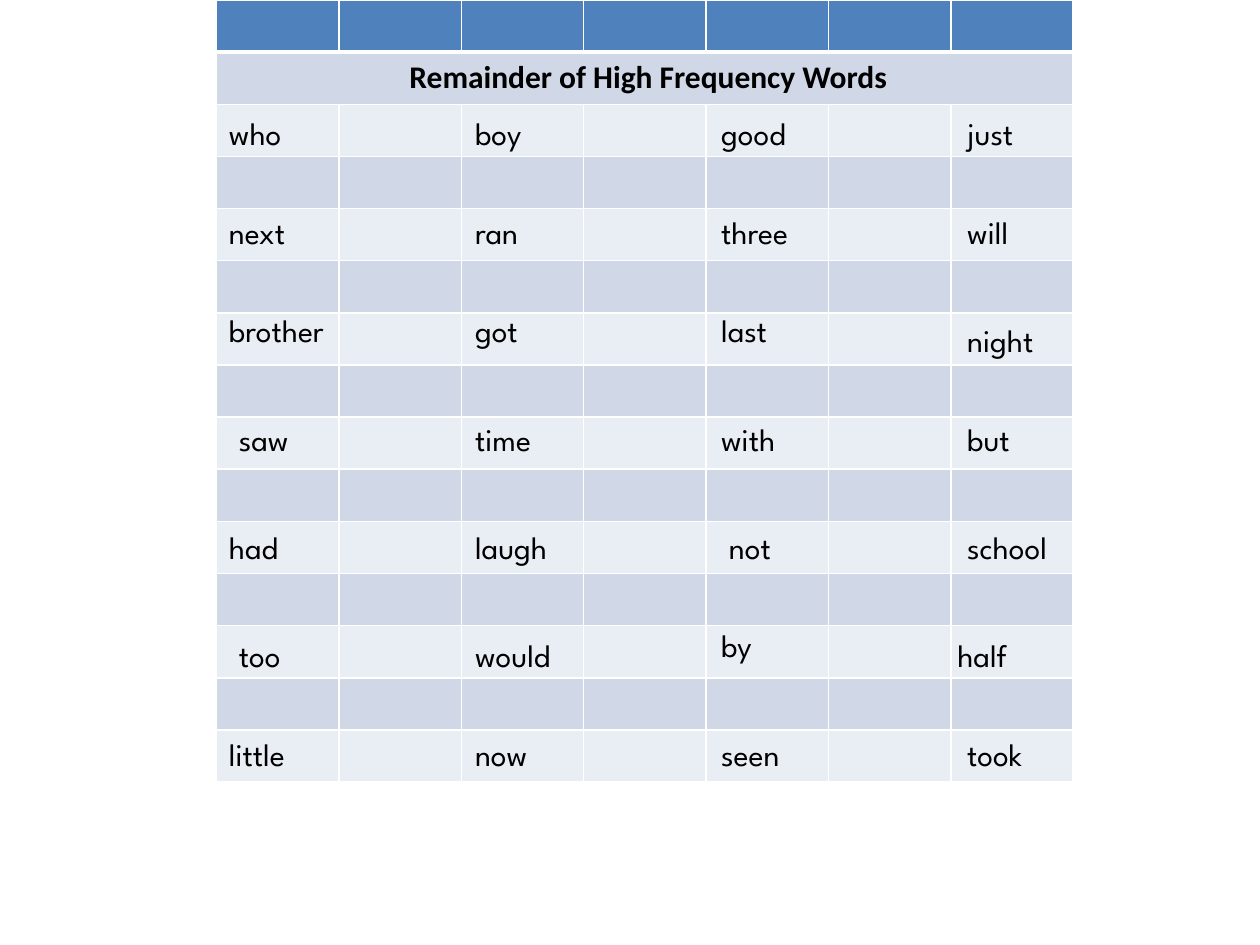
from lxml import etree
from pptx import Presentation
from pptx.dml.color import RGBColor
from pptx.enum.text import MSO_AUTO_SIZE, PP_ALIGN
from pptx.oxml.ns import qn
from pptx.util import Inches, Pt

CENTER = PP_ALIGN.CENTER
GROW = MSO_AUTO_SIZE.SHAPE_TO_FIT_TEXT

BLACK = RGBColor(0x00, 0x00, 0x00)
WHITE = RGBColor(0xFF, 0xFF, 0xFF)
HEADER_BLUE = RGBColor(0x4F, 0x81, 0xBD)
DARK_BAND = RGBColor(0xD0, 0xD8, 0xE8)
LIGHT_BAND = RGBColor(0xE9, 0xED, 0xF4)

ROWS, COLUMNS = 15, 7


def style_text(paragraph, font_name, bold=False):
    font = paragraph.runs[0].font
    font.name, font.size, font.bold = font_name, Pt(18), bold
    font.color.rgb = BLACK


def set_borders(cell, widths):
    properties = cell._tc.get_or_add_tcPr()
    for side, width in widths.items():
        line = etree.SubElement(properties, qn(f"a:ln{side}"), w=str(Pt(width)))
        fill = etree.SubElement(line, qn("a:solidFill"))
        etree.SubElement(fill, qn("a:srgbClr"), val=str(WHITE))


prs = Presentation()
prs.slide_width, prs.slide_height = Inches(10), Inches(7.5)
slide = prs.slides.add_slide(prs.slide_layouts[6])
unit = prs.slide_width // 128  # placement grid: 128 steps across the slide

# Banded table
left, table_width, table_height = 22 * unit, Inches(6.8), Inches(6.21)
table = slide.shapes.add_table(ROWS, COLUMNS, left, 0, table_width, table_height).table
for column in table.columns:
    column.width = table_width // COLUMNS
for row in table.rows:
    row.height = table_height // ROWS

for r in range(ROWS):
    band = HEADER_BLUE if r == 0 else DARK_BAND if r % 2 else LIGHT_BAND
    widths = {"L": 1, "R": 1, "T": 3 if r == 1 else 1, "B": 3 if r == 0 else 1}
    for c in range(COLUMNS):
        cell = table.cell(r, c)
        set_borders(cell, widths)
        cell.fill.solid()
        cell.fill.fore_color.rgb = band

# Title across the second row
title = table.cell(1, 0)
title.merge(table.cell(1, COLUMNS - 1))
title.text_frame.text = " Remainder of High Frequency Words"
heading = title.text_frame.paragraphs[0]
heading.alignment = CENTER
style_text(heading, "Calibri", bold=True)

# Words, one line per grid row, with the row's top in grid units
word_columns = [22, 47, 72, 97]
word_rows = {
    11: ["who", "boy", "good", "just"],
    21: ["next", "ran", "three", "will"],
    31: ["brother", "got", "last", "night"],
    42: ["saw", "time", "with", "but"],
    53: ["had", "laugh", " not", "school"],
    64: ["too", "would", "by", "half"],
    74: ["little", "now", "seen", "took"],
}
# Words that sit off the grid (right, down) or need another width
nudges = {"saw": (1, 0), "too": (1, 0), "night": (0, 1), "by": (0, -1), "half": (-1, 0)}
word_widths = {"saw": 11, "too": 11, "took": 11, "school": 13, "half": 13,
               "brother": 15, "would": 16}

for top, words in word_rows.items():
    for x, word in zip(word_columns, words):
        right, down = nudges.get(word, (0, 0))
        label = slide.shapes.add_textbox(
            (x + right) * unit, (top + down) * unit,
            word_widths.get(word, 12) * unit, Inches(0.4)).text_frame
        label.word_wrap = True
        label.auto_size = GROW
        label.text = word
        style_text(label.paragraphs[0], "League Spartan")

prs.save("out.pptx")
